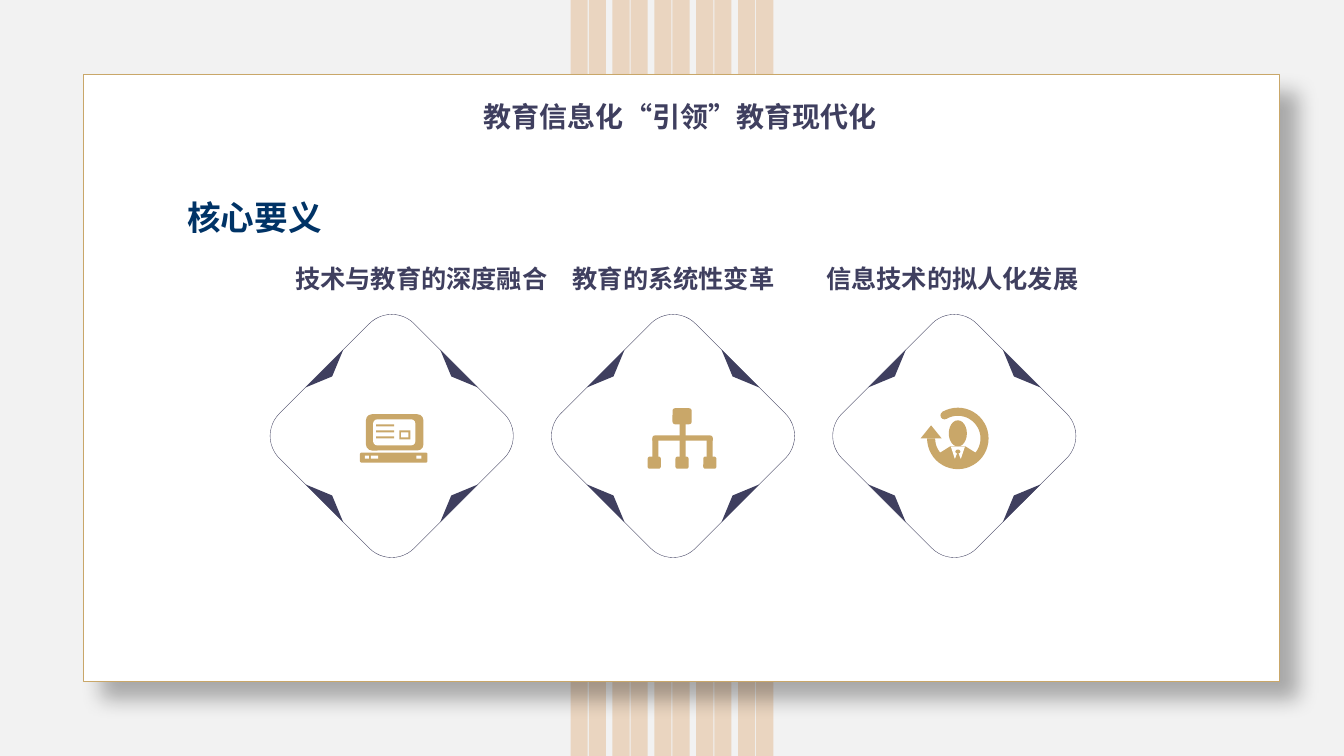
import math
import lxml.etree
import pptx
import pptx.dml.color
import pptx.enum.shapes
import pptx.enum.text
import pptx.oxml.ns
import pptx.util

Inches = pptx.util.Inches
Kind = pptx.enum.shapes.MSO_SHAPE
Align = pptx.enum.text.PP_ALIGN
Fit = pptx.enum.text.MSO_AUTO_SIZE
qn = pptx.oxml.ns.qn

COLORS = {"back": "F2F2F2", "stripe": "EAD5C0", "white": "FFFFFF", "gold": "C9A769",
          "ink": "3F3F5F", "navy": "003366", "shade": "000000"}
SANS = "Noto Sans CJK SC"
MONO = "Noto Sans Mono"

PAIRS, PAIR_STEP, PAIR_SHIFT = 5, 0.415, 0.18
SIDE, COLUMN_STEP = 1.89, 2.79
FLAP_WIDE, FLAP_HIGH, FLAP_REACH = 0.53, 0.11, 0.89

LABELS = [
    ("技术与教育的深度融合", 2.83, 2.73, MONO, Align.LEFT),
    ("教育的系统性变革", 5.57, 2.22, SANS, Align.CENTER),
    ("信息技术的拟人化发展", 8.08, 2.73, SANS, Align.CENTER),
]


def angle(degrees):
    return degrees * 0.6


class Deck:
    def __init__(self):
        self.show = pptx.Presentation()
        self.show.slide_width = Inches(13.33)
        self.show.slide_height = Inches(7.5)
        self.slide = self.show.slides.add_slide(self.show.slide_layouts[6])
        self.home = self.slide
        self.paint(self.slide.background.fill, "back")

    def paint(self, fill, color):
        fill.solid()
        fill.fore_color.rgb = pptx.dml.color.RGBColor.from_string(COLORS[color])

    def group(self):
        self.home = self.slide.shapes.add_group_shape()

    def leave(self):
        self.home = self.slide

    def shape(self, kind, left, top, width, height, fill=None, line=None, turn=0, bends=()):
        shape = self.home.shapes.add_shape(kind, Inches(left), Inches(top),
                                           Inches(width), Inches(height))
        shape.shadow.inherit = False
        shape.rotation = turn
        for index, bend in enumerate(bends):
            shape.adjustments[index] = bend
        if fill:
            self.paint(shape.fill, fill)
        else:
            shape.fill.background()
        if line:
            self.paint(shape.line.fill, line)
            shape.line.width = pptx.util.Pt(0.25)
        else:
            shape.line.fill.background()
        return shape

    def bar(self, left, top, width, height, fill="gold"):
        self.shape(Kind.RECTANGLE, left, top, width, height, fill)

    def block(self, left, top, width, height, fill="gold"):
        self.shape(Kind.ROUNDED_RECTANGLE, left, top, width, height, fill)

    def disc(self, x, y, width, height):
        self.shape(Kind.OVAL, x - width / 2, y - height / 2, width, height, "gold")

    def shade(self, shape):
        effects = shape._element.spPr.find(qn("a:effectLst"))
        outer = lxml.etree.SubElement(
            effects, qn("a:outerShdw"), blurRad=str(pptx.util.Pt(15)),
            dist=str(pptx.util.Pt(18)), dir="2700000", algn="tl", rotWithShape="0")
        color = lxml.etree.SubElement(outer, qn("a:srgbClr"), val=COLORS["shade"])
        lxml.etree.SubElement(color, qn("a:alpha"), val="30000")

    def diamond(self, left, top):
        self.group()
        self.shape(Kind.ROUNDED_RECTANGLE, left, top, SIDE, SIDE, line="ink", turn=45)
        for turn in (45, 135, 225, 315):
            toward = math.radians(turn + 90)
            x = left + SIDE / 2 + FLAP_REACH * math.cos(toward)
            y = top + SIDE / 2 + FLAP_REACH * math.sin(toward)
            self.shape(Kind.ISOSCELES_TRIANGLE, x - FLAP_WIDE / 2, y - FLAP_HIGH / 2,
                       FLAP_WIDE, FLAP_HIGH, "ink", turn=turn)
        self.leave()

    def laptop(self, left, top):
        self.group()
        self.block(left + 0.06, top, 0.57, 0.36)
        self.block(left + 0.13, top + 0.05, 0.42, 0.26, "white")
        for row in range(3):
            self.bar(left + 0.16, top + 0.1 + row * 0.06, 0.18, 0.02)
        self.bar(left + 0.39, top + 0.16, 0.11, 0.09)
        self.bar(left + 0.41, top + 0.18, 0.07, 0.05, "white")
        self.block(left, top + 0.38, 0.67, 0.1)
        for across, width in ((0.05, 0.04), (0.11, 0.07), (0.56, 0.05)):
            self.bar(left + across, top + 0.41, width, 0.03, "white")
        self.leave()

    def tree(self, x, top):
        self.group()
        self.block(x - 0.1, top, 0.19, 0.16)
        self.bar(x - 0.03, top + 0.15, 0.06, 0.14)
        self.shape(Kind.ROUND_2_SAME_RECTANGLE, x - 0.3, top + 0.27, 0.6, 0.05, "gold",
                   bends=(0.5,))
        for reach in (-0.27, 0, 0.27):
            self.bar(x + reach - 0.03, top + 0.3, 0.06, 0.2)
            self.block(x + reach * 1.02 - 0.07, top + 0.48, 0.13, 0.12)
        self.leave()

    def person(self, x, y):
        size, band, start = 0.61, 0.08, 240
        reach = (size - band) / 2
        toward = math.radians(start)
        self.group()
        self.shape(Kind.BLOCK_ARC, x - size / 2, y - size / 2, size, size, "gold",
                   bends=(angle(start), angle(180), band / size))
        self.disc(x + reach * math.cos(toward), y + reach * math.sin(toward), band, band)
        self.shape(Kind.ISOSCELES_TRIANGLE, x - 0.37, y - 0.13, 0.21, 0.13, "gold")
        self.disc(x, y - 0.05, 0.18, 0.26)
        self.shape(Kind.CHORD, x - 0.24, y - 0.24, 0.48, 0.48, "gold",
                   bends=(angle(36), angle(144)))
        self.shape(Kind.TRAPEZOID, x - 0.19, y + 0.08, 0.38, 0.07, "gold", bends=(1.6,))
        self.shape(Kind.TRAPEZOID, x - 0.07, y + 0.08, 0.14, 0.12, "white", turn=180,
                   bends=(0.33,))
        self.disc(x, y + 0.13, 0.05, 0.04)
        self.shape(Kind.ISOSCELES_TRIANGLE, x - 0.03, y + 0.13, 0.06, 0.08, "gold")
        self.leave()

    def text(self, words, left, top, width, height, size, color="ink", font=SANS,
             align=Align.CENTER, wrap=False):
        frame = self.slide.shapes.add_textbox(Inches(left), Inches(top), Inches(width),
                                              Inches(height)).text_frame
        frame.word_wrap = wrap
        frame.auto_size = Fit.SHAPE_TO_FIT_TEXT
        line = frame.paragraphs[0]
        line.alignment = align
        run = line.add_run()
        run.text = words
        run.font.size = pptx.util.Pt(size)
        run.font.bold = True
        run.font.name = font
        self.paint(run.font.fill, color)
        lxml.etree.SubElement(run.font._element, qn("a:ea"), typeface=font)


def main():
    deck = Deck()
    for pair in range(PAIRS):
        for shift in (0, PAIR_SHIFT):
            deck.bar(5.66 + pair * PAIR_STEP + shift, 0, 0.17, 7.5, "stripe")
    card = deck.shape(Kind.RECTANGLE, 0.83, 0.74, 11.86, 6.02, "white", "gold")
    deck.shade(card)

    for column, (words, left, width, font, align) in enumerate(LABELS):
        deck.diamond(2.94 + column * COLUMN_STEP, 3.38)
        deck.text(words, left, 2.56, width, 0.4, 18, font=font, align=align)

    deck.laptop(3.57, 4.11)
    deck.tree(6.77, 4.05)
    deck.person(9.5, 4.35)

    deck.text("教育信息化“引领”教育现代化", 4.7, 0.94, 4.13, 0.44, 20, align=Align.LEFT)
    deck.text("核心要义", 1.66, 1.9, 1.73, 0.5, 24, color="navy", wrap=True)
    deck.show.save("out.pptx")


if __name__ == "__main__":
    main()
